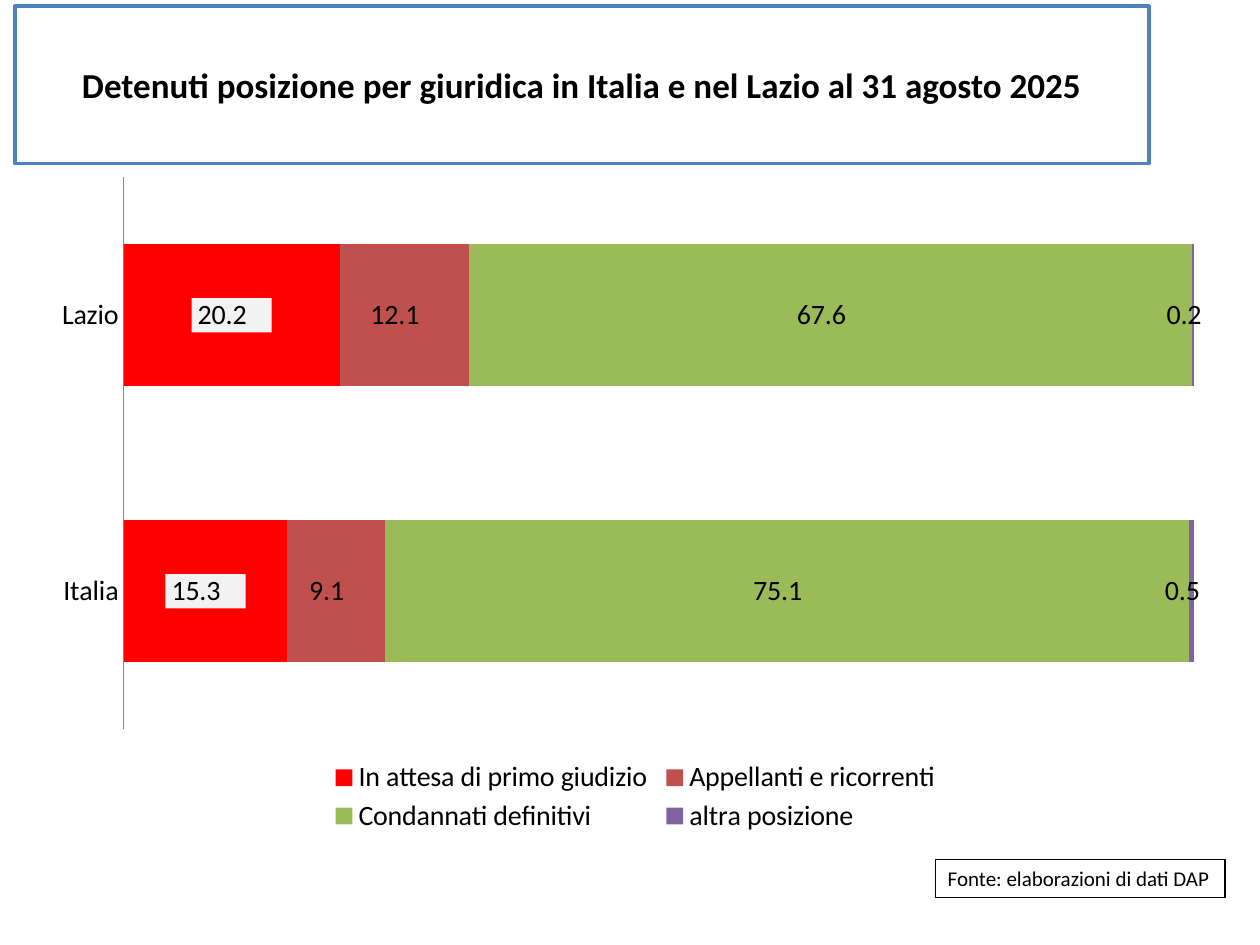
from dataclasses import dataclass

from lxml import etree
from pptx import Presentation
from pptx.chart import data
from pptx.dml.color import RGBColor
from pptx.enum import chart as charts, text
from pptx.oxml import parse_xml
from pptx.oxml.ns import nsdecls, qn
from pptx.util import Pt


@dataclass(frozen=True)
class Theme:
    font: str = "Calibri"
    ink: str = "000000"
    paper: str = "FFFFFF"
    accent: str = "4F81BD"
    axis: str = "868686"
    label_fill: str = "F2F2F2"
    series: tuple = ("FF0000", "C0504D", "9BBB59", "8064A2")
    title_size: int = 20
    chart_size: int = 16
    source_size: int = 12


THEME = Theme()
NUMBER_FORMAT = r'_-* #,##0.0\ _€_-;\-* #,##0.0\ _€_-;_-* "-"??\ _€_-;_-@_-'
CATEGORIES = ("Lazio", "Italia")
POSITIONS = {
    "In attesa di primo giudizio": (20.2, 15.3),
    "Appellanti e ricorrenti": (12.1, 9.1),
    "Condannati definitivi": (67.6, 75.1),
    "altra posizione": (0.2, 0.5),
}


def rgb(value):
    return RGBColor.from_string(value)


def style_font(font, size, color=THEME.ink, bold=False):
    font.name = THEME.font
    font.size = Pt(size)
    font.bold = bold
    font.color.rgb = rgb(color)


def write(box, words, align=text.PP_ALIGN.LEFT, anchor=text.MSO_ANCHOR.TOP,
          wrap=True, fit=text.MSO_AUTO_SIZE.NONE, **style):
    frame = box.text_frame
    frame.word_wrap = wrap
    frame.auto_size = fit
    frame.vertical_anchor = anchor
    para = frame.paragraphs[0]
    para.alignment = align
    span = para.add_run()
    span.text = words
    style_font(span.font, **style)


def set_layout(element, index, target, **fractions):
    for old in element.findall(qn("c:layout")):
        element.remove(old)
    layout = parse_xml(f"<c:layout {nsdecls('c')}><c:manualLayout/></c:layout>")
    settings = {"xMode": "edge", "yMode": "edge", **fractions}
    if target:
        settings = {"layoutTarget": target, **settings}
    for name, value in settings.items():
        etree.SubElement(layout[0], qn(f"c:{name}")).set("val", str(value))
    element.insert(index, layout)


class SlideBuilder:
    def __init__(self, deck, theme):
        self.theme = theme
        self.page = deck.slides.add_slide(deck.slide_layouts[5])

    def outline(self, box, color, width):
        box.fill.solid()
        box.fill.fore_color.rgb = rgb(self.theme.paper)
        box.line.color.rgb = rgb(color)
        box.line.width = Pt(width)

    def title(self, words, left, top, width, height):
        box = self.page.shapes.title
        box.left, box.top, box.width, box.height = map(Pt, (left, top, width, height))
        self.outline(box, self.theme.accent, 2)
        write(box, words, align=text.PP_ALIGN.CENTER, anchor=text.MSO_ANCHOR.MIDDLE,
              size=self.theme.title_size, bold=True)

    def source(self, words, left, top, width, height):
        box = self.page.shapes.add_textbox(*map(Pt, (left, top, width, height)))
        self.outline(box, self.theme.ink, 0.75)
        write(box, words, wrap=False, fit=text.MSO_AUTO_SIZE.SHAPE_TO_FIT_TEXT,
              size=self.theme.source_size)

    def stacked_bars(self, categories, values, left, top, width, height):
        table = data.CategoryChartData(number_format="0.0")
        table.categories = categories
        for name, numbers in values.items():
            table.add_series(name, numbers)
        chart = self.page.shapes.add_chart(
            charts.XL_CHART_TYPE.BAR_STACKED_100,
            *map(Pt, (left, top, width, height)), table).chart
        style_font(chart.font, self.theme.chart_size)
        chart.has_title = False
        plot = chart.plots[0]
        plot.gap_width, plot.overlap = 95, 100
        plot.vary_by_categories = False
        for series, color in zip(plot.series, self.theme.series):
            series.format.fill.solid()
            series.format.fill.fore_color.rgb = rgb(color)
            self.value_labels(series)
        self.fill_labels(plot.series[0])
        self.axes(chart)
        self.legend(chart)
        set_layout(chart.plots[0]._element.getparent(), 0, "inner",
                   x=0.07, y=0.02, w=0.9, h=0.82)

    def value_labels(self, series):
        labels = series.data_labels
        labels.show_value = True
        labels.number_format = NUMBER_FORMAT
        labels.number_format_is_linked = False
        style_font(labels.font, self.theme.chart_size)

    def fill_labels(self, series):
        number_format = series.data_labels._element.find(qn("c:numFmt"))
        number_format.addnext(parse_xml(
            f'<c:spPr {nsdecls("c", "a")}><a:solidFill>'
            f'<a:srgbClr val="{self.theme.label_fill}"/></a:solidFill></c:spPr>'))

    def axes(self, chart):
        names = chart.category_axis
        names.reverse_order = True
        names.major_tick_mark = charts.XL_TICK_MARK.NONE
        names.has_major_gridlines = False
        names.format.line.color.rgb = rgb(self.theme.axis)
        names.format.line.width = Pt(0.75)
        shares = chart.value_axis
        shares.has_major_gridlines = False
        shares.visible = False

    def legend(self, chart):
        chart.has_legend = True
        legend = chart.legend
        legend.position = charts.XL_LEGEND_POSITION.BOTTOM
        legend.include_in_layout = False
        style_font(legend.font, self.theme.chart_size)
        set_layout(legend._element, 1, None, x=0.24, y=0.88, w=0.52, h=0.12)


def main():
    deck = Presentation()
    deck.slide_width, deck.slide_height = Pt(720), Pt(540)
    slide = SlideBuilder(deck, THEME)
    slide.title("Detenuti posizione per giuridica in Italia e nel Lazio al 31 agosto 2025",
                8.5, 3.5, 648, 90)
    slide.source("Fonte: elaborazioni di dati DAP", 534.5, 491, 165.5, 21.8)
    slide.stacked_bars(CATEGORIES, POSITIONS, 23, 93.5, 680, 385)
    deck.save("out.pptx")


if __name__ == "__main__":
    main()
